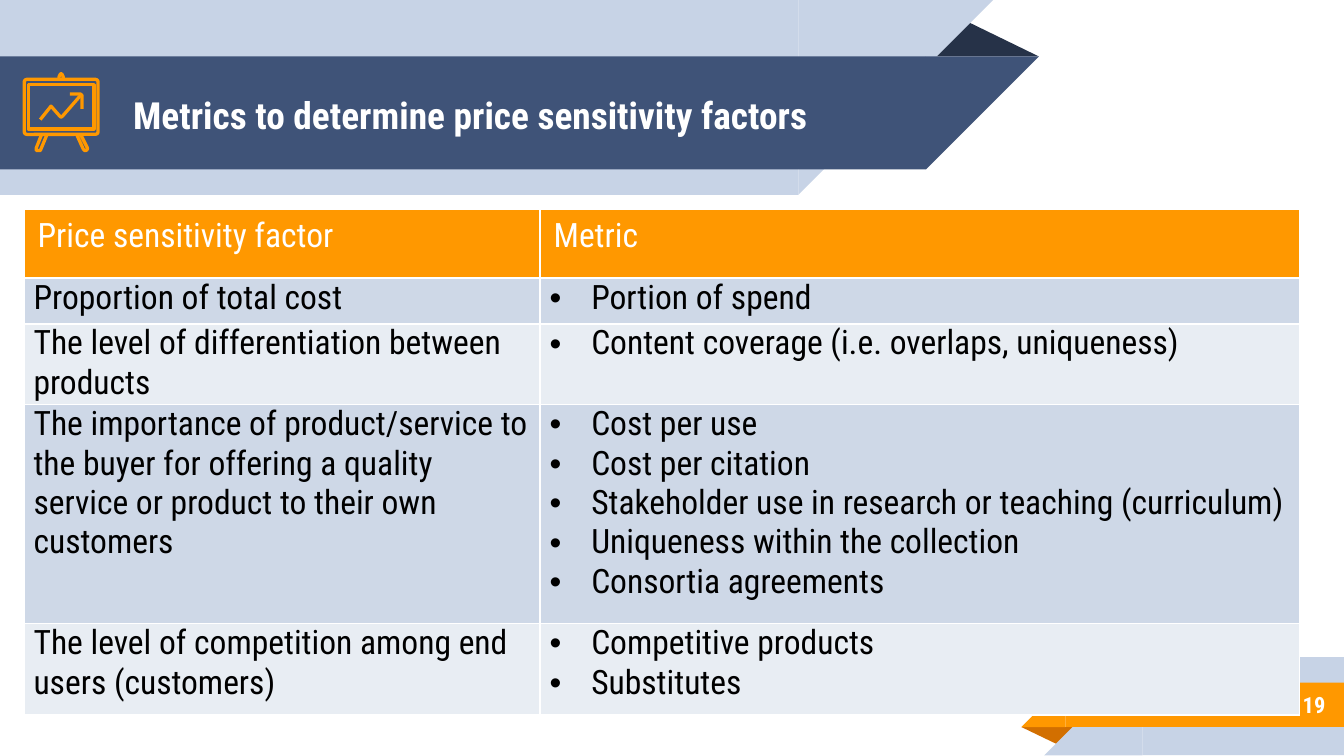
from lxml import etree
from pptx import Presentation
from pptx.dml.color import RGBColor
from pptx.enum.shapes import MSO_SHAPE
from pptx.enum.text import MSO_ANCHOR, PP_ALIGN
from pptx.oxml.ns import qn
from pptx.util import Inches, Pt

RECTANGLE = MSO_SHAPE.RECTANGLE
CORNER = MSO_SHAPE.RIGHT_TRIANGLE
TRIANGLE = MSO_SHAPE.ISOSCELES_TRIANGLE
ROUNDED = MSO_SHAPE.ROUNDED_RECTANGLE
MIDDLE = MSO_ANCHOR.MIDDLE
LEFT, RIGHT = PP_ALIGN.LEFT, PP_ALIGN.RIGHT

FONT = "Roboto Condensed"
COLORS = {
    "white": "FFFFFF", "black": "000000", "navy": "3F5378", "dark": "263248",
    "pale": "C7D3E6", "orange": "FF9800", "rust": "D26F00",
    "odd_row": "CED8E7", "even_row": "E8EDF3",
}

SLIDE_WIDTH = 10
SLIDE_HEIGHT = SLIDE_WIDTH * 9 / 16
COLUMN_WIDTHS = [3.84, 5.65]
ROW_HEIGHTS = [0.51, 0.34, 0.56, 1.63, 0.68]
HEADER = ["Price sensitivity factor", "Metric"]
FACTORS = [
    ("Proportion of total cost", ["Portion of spend"]),
    ("The level of differentiation between products",
     ["Content coverage (i.e. overlaps, uniqueness)"]),
    ("The importance of product/service to the buyer for offering a quality "
     "service or product to their own customers",
     ["Cost per use", "Cost per citation",
      "Stakeholder use in research or teaching (curriculum)",
      "Uniqueness within the collection", "Consortia agreements"]),
    ("The level of competition among end users (customers)",
     ["Competitive products", "Substitutes"]),
]

# Strokes of the easel icon, in inches
KNOB = [(0.47, 0.59), (0.47, 0.57), (0.46, 0.55), (0.45, 0.55), (0.44, 0.57), (0.44, 0.59)]
LEFT_LEG = [(0.31, 1), (0.27, 1.1), (0.27, 1.12), (0.28, 1.12), (0.3, 1.12), (0.35, 1)]
RIGHT_LEG = [(0.57, 1), (0.62, 1.11), (0.63, 1.12), (0.64, 1.12), (0.65, 1.11), (0.65, 1.1), (0.6, 1)]
TREND = [(0.6, 0.71), (0.47, 0.86), (0.46, 0.87), (0.45, 0.87), (0.38, 0.79), (0.3, 0.89)]
ARROW_TIP = [(0.52, 0.7), (0.6, 0.7), (0.61, 0.71), (0.61, 0.81)]


def color(name):
    return RGBColor.from_string(COLORS[name])


def write(para, text, size=18, fill="black", bold=False, align=LEFT):
    para.alignment = align
    span = para.add_run()
    span.text = text
    span.font.name = FONT
    span.font.size = Pt(size)
    span.font.bold = bold
    span.font.color.rgb = color(fill)


def add_bullet(para, indent=0.31):
    props = para._p.get_or_add_pPr()
    props.set("marL", str(Inches(indent)))
    props.set("indent", str(-Inches(indent)))
    tint = etree.SubElement(props, qn("a:buClr"))
    etree.SubElement(tint, qn("a:srgbClr"), val=COLORS["black"])
    etree.SubElement(props, qn("a:buFont"), typeface="Arial")
    etree.SubElement(props, qn("a:buChar"), char="•")


class SlideBuilder:
    def __init__(self, slide):
        self.slide = slide
        self.shapes = slide.shapes

    def shape(self, kind, left, top, width, height, fill=None, rotation=0, adjust=None):
        shape = self.shapes.add_shape(
            kind, Inches(left), Inches(top), Inches(width), Inches(height))
        shape.rotation = rotation
        if adjust is not None:
            shape.adjustments[0] = adjust
        if fill:
            shape.fill.solid()
            shape.fill.fore_color.rgb = color(fill)
            shape.line.fill.background()
            shape.shadow.inherit = False
        else:
            self.outline(shape)

    def outline(self, shape):
        shape.fill.background()
        shape.line.color.rgb = color("orange")
        shape.line.width = Pt(1.75)
        shape.shadow.inherit = False

    def stroke(self, points):
        start, *others = [(Inches(x), Inches(y)) for x, y in points]
        builder = self.shapes.build_freeform(*start)
        builder.add_line_segments(others, close=False)
        self.outline(builder.convert_to_shape())

    def top_band(self, top, width, height, fill):
        self.shape(RECTANGLE, 0, top, width, height, fill)
        self.shape(CORNER, width, top, height, height, fill, rotation=90)

    def bottom_band(self, left, top, height, fill):
        self.shape(RECTANGLE, left, top, SLIDE_WIDTH - left, height, fill)
        self.shape(CORNER, left - height, top, height, height, fill, rotation=270)

    def label(self, box, left, top, width, height, text, **style):
        box.left, box.top = Inches(left), Inches(top)
        box.width, box.height = Inches(width), Inches(height)
        frame = box.text_frame
        frame.word_wrap = True
        frame.vertical_anchor = MIDDLE
        frame.margin_left = frame.margin_right = Inches(0.1)
        frame.margin_top = frame.margin_bottom = Inches(0.1)
        write(frame.paragraphs[0], text, fill="white", bold=True, **style)

    def title(self, *place_and_text, **style):
        title = self.shapes.title
        title.element.getparent().append(title.element)  # in front of the bands
        self.label(title, *place_and_text, **style)

    def text(self, *place_and_text, **style):
        self.label(self.shapes.add_textbox(0, 0, 0, 0), *place_and_text, **style)

    def cell(self, cell, lines, fill, text_fill="black", bullets=False):
        cell.fill.solid()
        cell.fill.fore_color.rgb = color(fill)
        frame = cell.text_frame
        for index, line in enumerate(lines):
            para = frame.add_paragraph() if index else frame.paragraphs[0]
            write(para, line, fill=text_fill)
            if bullets:
                add_bullet(para)

    def table(self, left, top):
        # The default table style supplies the white cell borders
        table = self.shapes.add_table(
            len(ROW_HEIGHTS), len(COLUMN_WIDTHS), Inches(left), Inches(top),
            Inches(sum(COLUMN_WIDTHS)), Inches(sum(ROW_HEIGHTS))).table
        for column, width in zip(table.columns, COLUMN_WIDTHS):
            column.width = Inches(width)
        for row, height in zip(table.rows, ROW_HEIGHTS):
            row.height = Inches(height)
        for index, heading in enumerate(HEADER):
            self.cell(table.cell(0, index), [heading], "orange", "white")
        for row, (factor, metrics) in enumerate(FACTORS, start=1):
            fill = "odd_row" if row % 2 else "even_row"
            for column, lines in enumerate(([factor], metrics)):
                cell = table.cell(row, column)
                cell.margin_left = cell.margin_right = Inches(0.07)
                cell.margin_top = cell.margin_bottom = 0
                self.cell(cell, lines, fill, bullets=column == 1)


def main():
    deck = Presentation()
    deck.slide_width, deck.slide_height = Inches(SLIDE_WIDTH), Inches(SLIDE_HEIGHT)
    page = SlideBuilder(deck.slides.add_slide(deck.slide_layouts[5]))

    # Folded ribbon at the top
    page.shape(TRIANGLE, 6.88, 0.14, 0.85, 0.28, "dark", adjust=0.324)
    page.top_band(0, 5.94, 1.45, "pale")
    page.top_band(0.42, 6.89, 0.84, "navy")

    # Folded ribbon at the bottom right
    page.shape(TRIANGLE, 7.6, 5.41, 0.43, 0.14, "rust", rotation=180, adjust=0.324)
    page.bottom_band(8.5, 4.89, 0.73, "pale")
    page.bottom_band(7.93, 5.08, 0.33, "orange")

    # Title and page number
    page.title(0.89, 0.43, 5.75, 0.84,
               "Metrics to determine price sensitivity factors", size=20)
    page.text(8.33, 5.07, 1.63, 0.35, "19", size=12, align=RIGHT)

    # Easel icon: board, inner frame, then strokes
    page.shape(ROUNDED, 0.18, 0.59, 0.55, 0.41, adjust=0.05)
    page.shape(RECTANGLE, 0.21, 0.63, 0.49, 0.33)
    for points in (KNOB, LEFT_LEG, RIGHT_LEG, TREND, ARROW_TIP):
        page.stroke(points)

    # Factors and their metrics
    page.table(0.18, 1.56)

    deck.save("out.pptx")


if __name__ == "__main__":
    main()
